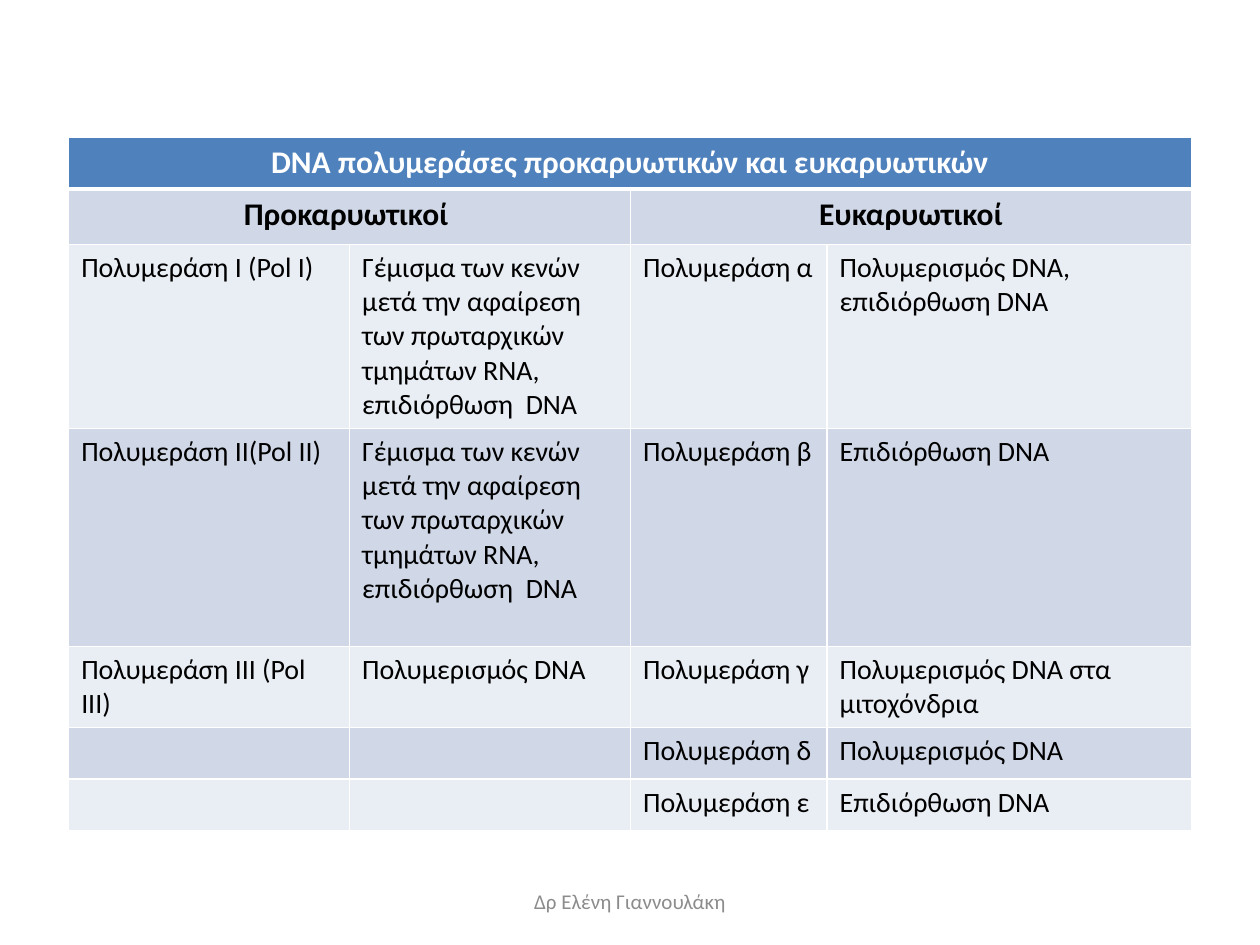
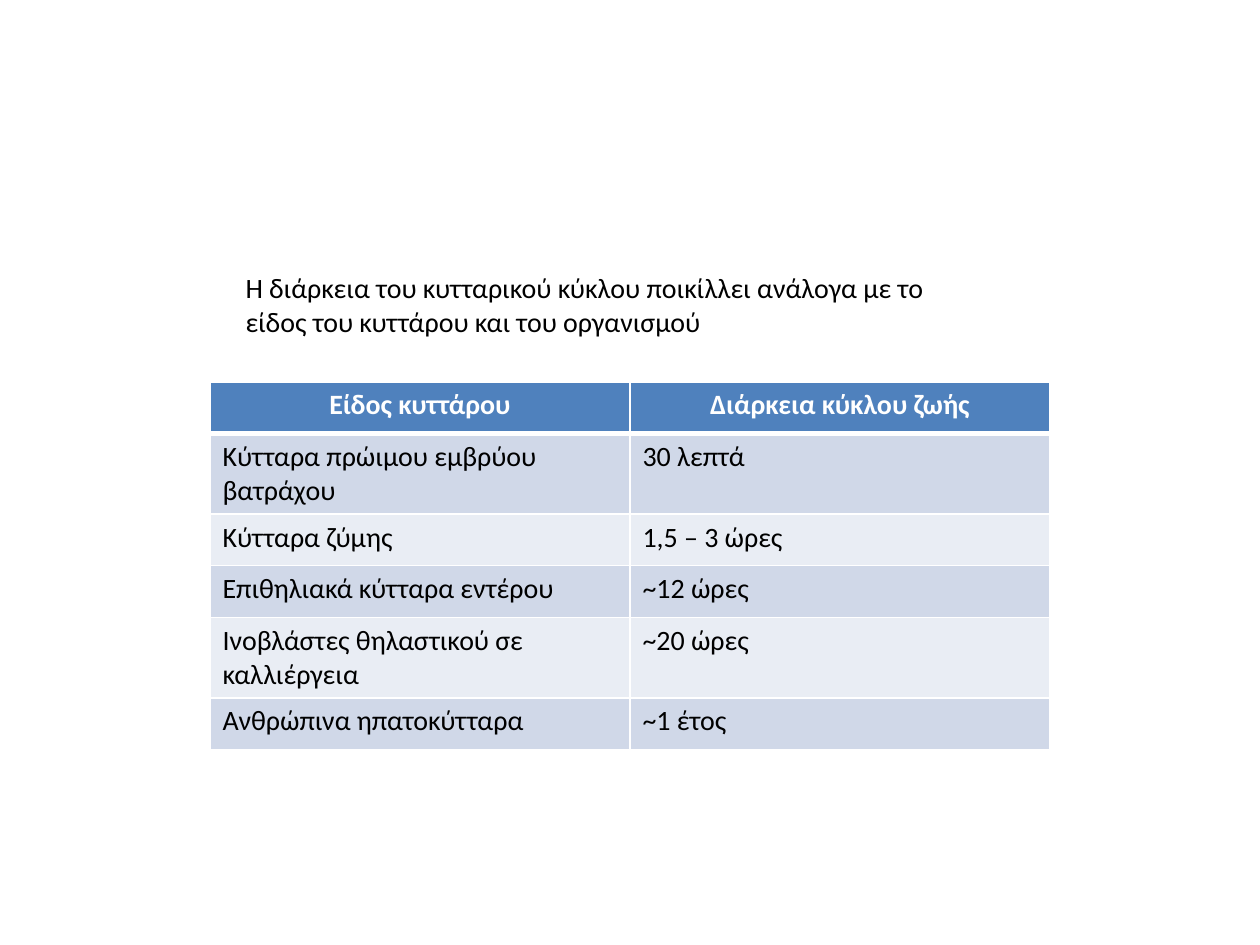
from dataclasses import dataclass

from lxml import etree
from pptx import Presentation
from pptx import util as u
from pptx.dml.color import RGBColor
from pptx.enum import text
from pptx.oxml.ns import qn

# Content: None marks a cell covered by the merged cell to its left
GAP_FILLING = "Γέμισμα των κενών μετά την αφαίρεση των πρωταρχικών τμημάτων RNA, επιδιόρθωση  DNA"
POLYMERASES = [
    ("DNA πολυμεράσες προκαρυωτικών και ευκαρυωτικών", None, None, None),
    ("Προκαρυωτικοί ", None, "Ευκαρυωτικοί", None),
    ("Πολυμεράση Ι (Pol I)", GAP_FILLING, "Πολυμεράση α", "Πολυμερισμός DNA, επιδιόρθωση DNA"),
    ("Πολυμεράση ΙΙ(Pol II)", GAP_FILLING, "Πολυμεράση β", "Επιδιόρθωση DNA"),
    ("Πολυμεράση ΙΙΙ (Pol III)", "Πολυμερισμός DNA", "Πολυμεράση γ",
     "Πολυμερισμός DNA στα μιτοχόνδρια"),
    ("", "", "Πολυμεράση δ", "Πολυμερισμός DNA"),
    ("", "", "Πολυμεράση ε", "Επιδιόρθωση DNA"),
]
CELL_CYCLES = [
    ("Είδος κυττάρου", "Διάρκεια κύκλου ζωής"),
    ("Κύτταρα πρώιμου εμβρύου βατράχου", "30 λεπτά"),
    ("Κύτταρα ζύμης", "1,5 – 3 ώρες"),
    ("Επιθηλιακά κύτταρα εντέρου", "~12 ώρες"),
    ("Ινοβλάστες θηλαστικού σε καλλιέργεια", "~20 ώρες"),
    ("Ανθρώπινα ηπατοκύτταρα", "~1 έτος"),
]
CYCLE_INTRO = ("Η διάρκεια του κυτταρικού κύκλου ποικίλλει ανάλογα με το "
               "είδος του κυττάρου και του οργανισμού")
FOOTER = "Δρ Ελένη Γιαννουλάκη"


@dataclass(frozen=True)
class Theme:
    font: str = "Calibri"
    heading: int = 18
    body: int = 16
    footer: int = 12
    white: str = "FFFFFF"
    black: str = "000000"
    grey: str = "8C8C8C"
    header_fill: str = "4F81BD"
    bands: tuple = ("E9EDF4", "D0D8E8")
    thin: int = 1
    thick: int = 3


THEME = Theme()
SLIDE_WIDTH, SLIDE_HEIGHT = 10, 7.5
ROW, TWO_LINES = 0.41, 0.64  # row heights for one and two lines of text


def format_text(frame, content, size, color, bold=False, align=text.PP_ALIGN.LEFT):
    paragraph = frame.paragraphs[0]
    paragraph.text = content
    paragraph.alignment = align
    formats = {"name": THEME.font, "size": u.Pt(size), "bold": bold}
    for name, value in formats.items():
        setattr(paragraph.font, name, value)
    paragraph.font.color.rgb = RGBColor.from_string(color)


def add_text(slide, place, content, size, color, align=text.PP_ALIGN.LEFT,
             anchor=text.MSO_ANCHOR.TOP):
    box = slide.shapes.add_textbox(*map(u.Inches, place))
    box.text_frame.word_wrap = True
    box.text_frame.vertical_anchor = anchor
    format_text(box.text_frame, content, size, color, align=align)


def set_borders(cell, top, bottom):
    properties = cell._tc.get_or_add_tcPr()
    widths = {"lnL": THEME.thin, "lnR": THEME.thin, "lnT": top, "lnB": bottom}
    for tag, width in widths.items():
        line = etree.SubElement(properties, qn(f"a:{tag}"), w=str(u.Pt(width)))
        fill = etree.SubElement(line, qn("a:solidFill"))
        etree.SubElement(fill, qn("a:srgbClr"), val=THEME.white)


def add_banded_table(slide, left, top, columns, heights, rows, heading_rows, heading_size):
    frame = slide.shapes.add_table(
        len(rows), len(columns), *map(u.Inches, (left, top, sum(columns), sum(heights))))
    table = frame.table
    for column, width in zip(table.columns, columns):
        column.width = u.Inches(width)
    for row, height in zip(table.rows, heights):
        row.height = u.Inches(height)

    for r, contents in enumerate(rows):
        is_header, is_heading = r == 0, r < heading_rows
        for c, content in enumerate(contents):
            cell = table.cell(r, c)
            set_borders(cell, THEME.thick if r == 1 else THEME.thin,
                        THEME.thick if is_header else THEME.thin)
            cell.fill.solid()
            cell.fill.fore_color.rgb = RGBColor.from_string(
                THEME.header_fill if is_header else THEME.bands[r % 2])
            if content:
                format_text(cell.text_frame, content,
                            heading_size if is_heading else THEME.body,
                            THEME.white if is_header else THEME.black, is_heading,
                            text.PP_ALIGN.CENTER if is_heading else text.PP_ALIGN.LEFT)

        # Merge each heading with the covered cells after it
        starts = [c for c, content in enumerate(contents) if content is not None]
        for start, end in zip(starts, starts[1:] + [len(contents)]):
            if end - start > 1:
                table.cell(r, start).merge(table.cell(r, end - 1))


def build_polymerases(slide):
    columns = (2.23, 2.23, 1.56, 2.89)
    heights = (ROW, 0.44, 1.46, 1.73, TWO_LINES, ROW, ROW)
    add_banded_table(slide, (SLIDE_WIDTH - sum(columns)) / 2, 1.09, columns, heights,
                     POLYMERASES, 2, THEME.heading)
    footer_width = 3.17
    add_text(slide, ((SLIDE_WIDTH - footer_width) / 2, 6.95, footer_width, 0.4), FOOTER,
             THEME.footer, THEME.grey, text.PP_ALIGN.CENTER, text.MSO_ANCHOR.MIDDLE)


def build_cell_cycles(slide):
    add_text(slide, (1.85, 2.1, 5.98, TWO_LINES), CYCLE_INTRO, THEME.body, THEME.black)
    columns = (SLIDE_WIDTH / 3,) * 2
    heights = (ROW, TWO_LINES, ROW, ROW, TWO_LINES, ROW)
    add_banded_table(slide, SLIDE_WIDTH / 6, 3.03, columns, heights,
                     CELL_CYCLES, 1, THEME.body)


def main():
    presentation = Presentation()
    presentation.slide_width = u.Inches(SLIDE_WIDTH)
    presentation.slide_height = u.Inches(SLIDE_HEIGHT)
    blank = presentation.slide_layouts.get_by_name("Blank")
    for build in (build_polymerases, build_cell_cycles):
        build(presentation.slides.add_slide(blank))
    presentation.save("out.pptx")


if __name__ == "__main__":
    main()
